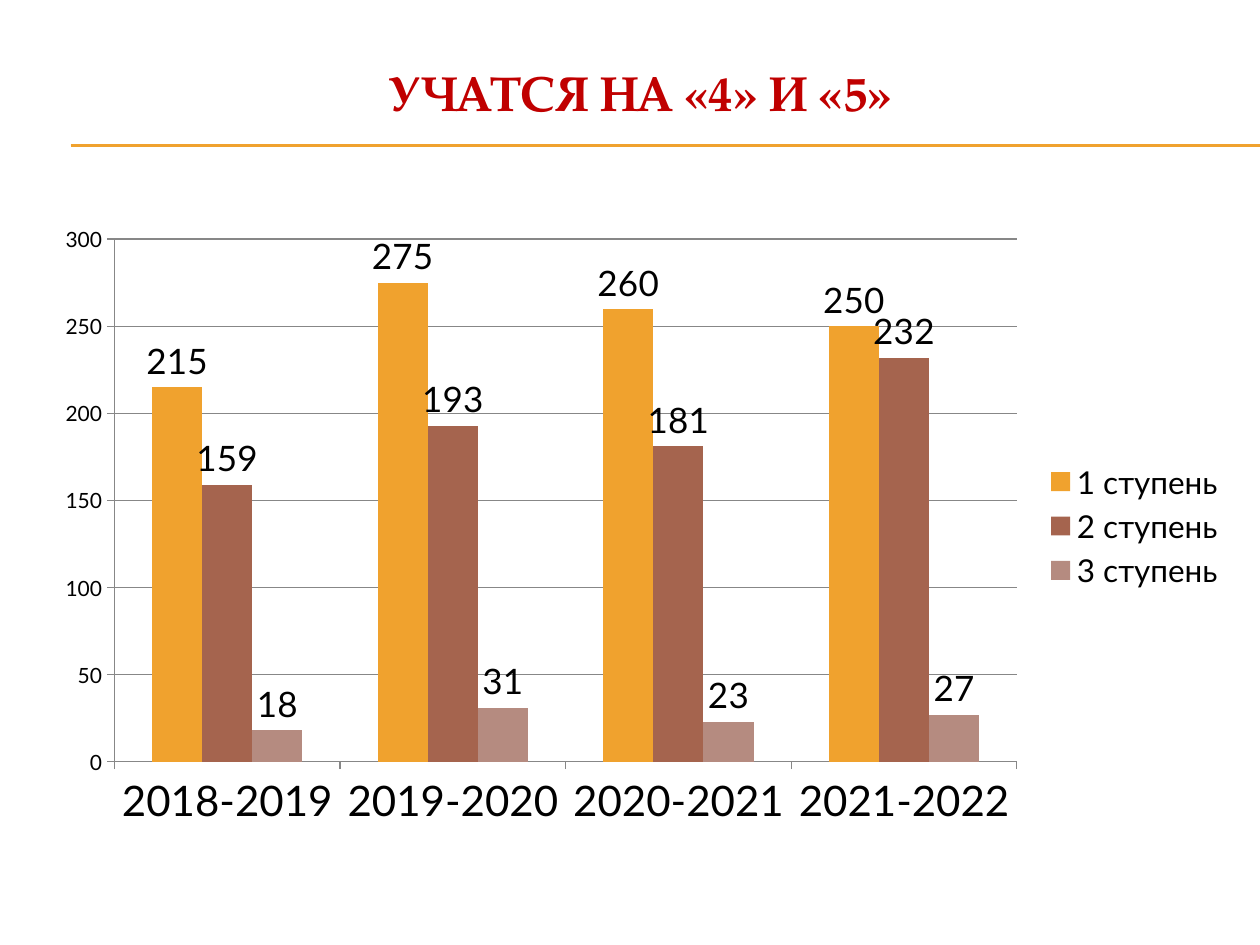
from lxml.etree import SubElement
from pptx import Presentation
from pptx.chart.data import CategoryChartData
from pptx.dml.color import RGBColor
from pptx.enum.chart import (XL_CHART_TYPE, XL_LABEL_POSITION,
                             XL_LEGEND_POSITION, XL_TICK_MARK)
from pptx.enum.shapes import MSO_CONNECTOR
from pptx.enum.text import MSO_ANCHOR, PP_ALIGN
from pptx.oxml.ns import qn
from pptx.util import Inches, Pt

# Content
TITLE = "УЧАТСЯ НА «4» И «5»"
YEARS = ["2018-2019", "2019-2020", "2020-2021", "2021-2022"]
SERIES = [
    ("1 ступень", [215, 275, 260, 250], "F0A22E"),
    ("2 ступень", [159, 193, 181, 232], "A5644E"),
    ("3 ступень", [18, 31, 23, 27], "B58B80"),
]
RULE_HEIGHTS = [1.15, 1.16]
LEFT, WIDTH = Inches(0.33), Inches(9.5)


def rgb(value):
    return RGBColor.from_string(value)


def set_font(font, size, color="000000", name="Lato", bold=False):
    font.size, font.name, font.bold = Pt(size), name, bold
    font.color.rgb = rgb(color)


prs = Presentation()
prs.slide_width, prs.slide_height = Inches(10), Inches(7.5)
s = prs.slides.add_slide(prs.slide_layouts[5])

# Double rule under the title
for y in RULE_HEIGHTS:
    rule = s.shapes.add_connector(MSO_CONNECTOR.STRAIGHT, Inches(0.56), Inches(y),
                                  Inches(10), Inches(y))
    rule.line.color.rgb = rgb("F0A22E")
    rule.line.width = Pt(0.75)
    SubElement(rule._element.spPr, qn("a:effectLst"))

# Title
title = s.shapes.title
title.left, title.top, title.width, title.height = LEFT, Inches(0.5), WIDTH, Inches(0.92)
tf = title.text_frame
tf.text = TITLE
tf.vertical_anchor = MSO_ANCHOR.TOP
tf.margin_top = 0
p = tf.paragraphs[0]
p.alignment = PP_ALIGN.CENTER
set_font(p.font, 27.9, "C00000", "TeX Gyre Pagella", True)

# Chart
data = CategoryChartData()
data.categories = YEARS
for name, values, _ in SERIES:
    data.add_series(name, values)
chart = s.shapes.add_chart(XL_CHART_TYPE.COLUMN_CLUSTERED, LEFT, Inches(1.7),
                           WIDTH, Inches(4.95), data).chart
set_font(chart.font, 10)
chart.has_title = False
chart.has_legend = True
chart.legend.position = XL_LEGEND_POSITION.RIGHT
chart.legend.include_in_layout = False
set_font(chart.legend.font, 18)

# Columns and their values
plot = chart.plots[0]
plot.vary_by_categories = False
plot.gap_width, plot.overlap = 150, 0
for series, (_, _, color) in zip(plot.series, SERIES):
    series.format.fill.solid()
    series.format.fill.fore_color.rgb = rgb(color)
    labels = series.data_labels
    labels.show_value = True
    labels.position = XL_LABEL_POSITION.OUTSIDE_END
    set_font(labels.font, 20)

# Axes
value_axis = chart.value_axis
value_axis.minimum_scale, value_axis.maximum_scale = 0, 300
value_axis.major_unit = 50
value_axis.has_major_gridlines = True
for axis, size in ((chart.category_axis, 24), (value_axis, 12)):
    axis.major_tick_mark = XL_TICK_MARK.OUTSIDE
    set_font(axis.tick_labels.font, size)
for item in (chart.category_axis, value_axis, value_axis.major_gridlines):
    item.format.line.color.rgb = rgb("878787")
    item.format.line.width = Pt(0.75)

prs.save("out.pptx")
